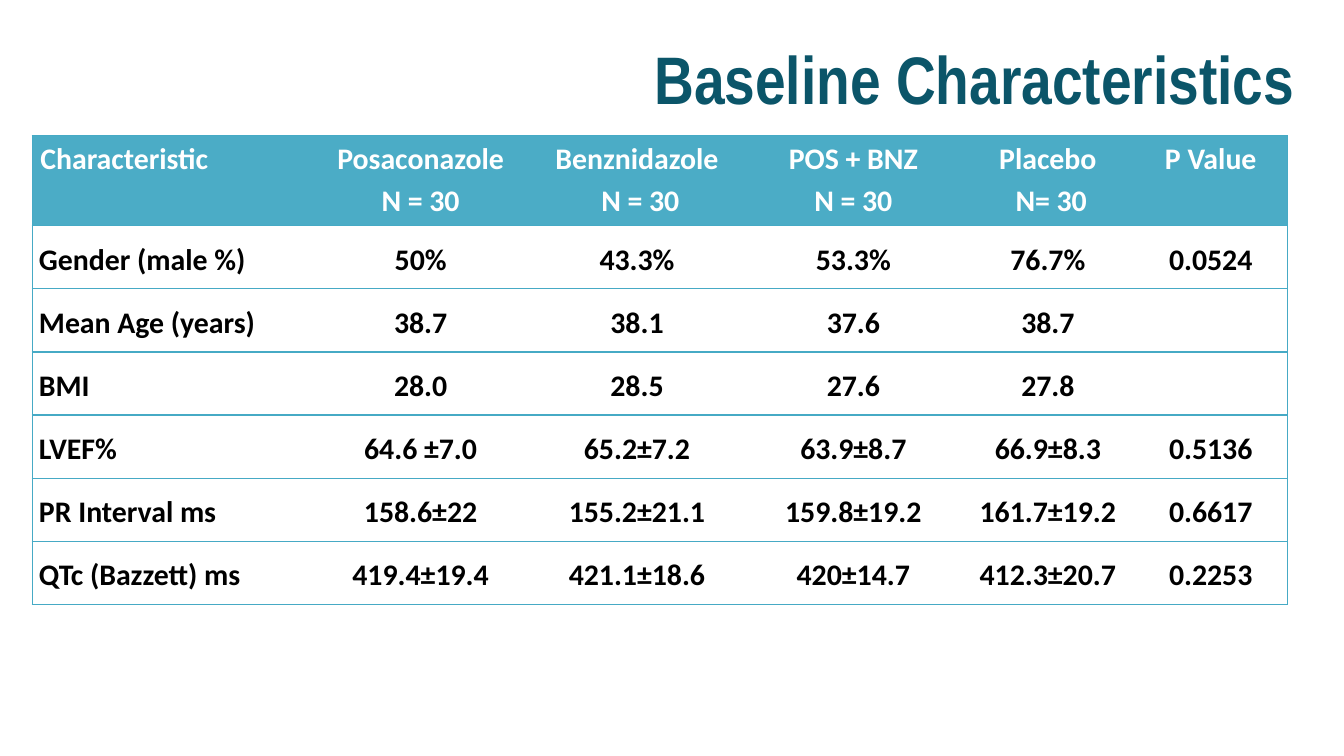
import pptx
import pptx.dml.color
import pptx.enum.text
import pptx.oxml
import pptx.oxml.ns
import pptx.util
from dataclasses import dataclass

EMU_PER_PX = 4572
NO_TABLE_STYLE = "{2D5ABB26-0587-4C30-8999-92F81FD0307C}"
ALIGN = pptx.enum.text.PP_ALIGN
ANCHOR = pptx.enum.text.MSO_ANCHOR

COLUMN_WIDTHS = [417, 322, 322, 322, 257, 228]
HEADER_HEIGHT, BODY_HEIGHT = 134, 94
HEADER = ["Characteristic", "Posaconazole\nN = 30", "Benznidazole\n N = 30",
          "POS + BNZ\nN = 30", "Placebo\n N= 30", "P Value"]
BODY = [
    ["Gender (male %)", "50%", "43.3%", "53.3%", "76.7%", "0.0524"],
    ["Mean Age (years)", "38.7", "38.1", "37.6", "38.7", ""],
    ["BMI", "28.0", "28.5", "27.6", "27.8", ""],
    ["LVEF%", "64.6 ±7.0", "65.2±7.2", "63.9±8.7", "66.9±8.3", "0.5136"],
    ["PR Interval ms", "158.6±22", "155.2±21.1", "159.8±19.2", "161.7±19.2", "0.6617"],
    ["QTc (Bazzett) ms", "419.4±19.4", "421.1±18.6", "420±14.7", "412.3±20.7", "0.2253"],
]


@dataclass(frozen=True)
class Theme:
    title_font: str = "Arial Narrow"
    table_font: str = "Calibri"
    title_size: int = 36
    table_size: int = 16
    title_color: str = "0B5569"
    header_fill: str = "4BACC6"
    header_text: str = "FFFFFF"
    body_text: str = "000000"
    border: str = "46AAC5"
    border_width: float = 0.75


def px(length):
    return pptx.util.Emu(length * EMU_PER_PX)


def rgb(value):
    return pptx.dml.color.RGBColor.from_string(value)


def write_text(frame, text, *, font, size, color, align=ALIGN.LEFT, spacing=1.0):
    """Fill a text frame with bold text, one paragraph per line."""
    for index, line in enumerate(text.split("\n")):
        para = frame.paragraphs[0] if index == 0 else frame.add_paragraph()
        para.alignment = align
        para.line_spacing = spacing
        span = para.add_run()
        span.text = line
        span.font.name = font
        span.font.size = pptx.util.Pt(size)
        span.font.bold = True
        span.font.color.rgb = rgb(color)


class SlideBuilder:
    def __init__(self, page, theme):
        self.page = page
        self.theme = theme

    def title(self, text, left, top, width, height):
        box = self.page.shapes.add_textbox(px(left), px(top), px(width), px(height))
        frame = box.text_frame
        frame.word_wrap = True
        frame.vertical_anchor = ANCHOR.MIDDLE
        write_text(frame, text, font=self.theme.title_font, size=self.theme.title_size,
                   color=self.theme.title_color, align=ALIGN.RIGHT)

    def table(self, rows, left, top, widths, heights):
        holder = self.page.shapes.add_table(len(rows), len(widths), px(left), px(top),
                                            px(sum(widths)), px(sum(heights)))
        table = holder.table
        table.horz_banding = False
        style = table._tbl.tblPr.find(pptx.oxml.ns.qn("a:tableStyleId"))
        style.text = NO_TABLE_STYLE
        for column, width in zip(table.columns, widths):
            column.width = px(width)
        for row, height in zip(table.rows, heights):
            row.height = px(height)
        for row_index, row in enumerate(rows):
            for column_index, text in enumerate(row):
                cell = table.cell(row_index, column_index)
                sides = "TB"
                if column_index == 0:
                    sides = "LTB"
                elif column_index == len(widths) - 1:
                    sides = "RTB"
                self.borders(cell, sides)
                self.fill_cell(cell, text, header=row_index == 0, label=column_index == 0)

    def borders(self, cell, sides):
        properties = cell._tc.get_or_add_tcPr()
        width = pptx.util.Pt(self.theme.border_width)
        for side in sides:
            properties.append(pptx.oxml.parse_xml(
                f'<a:ln{side} {pptx.oxml.ns.nsdecls("a")} w="{width}"><a:solidFill>'
                f'<a:srgbClr val="{self.theme.border}"/></a:solidFill></a:ln{side}>'))

    def fill_cell(self, cell, text, *, header, label):
        theme = self.theme
        if header:
            cell.fill.solid()
            cell.fill.fore_color.rgb = rgb(theme.header_fill)
        else:
            cell.fill.background()
        cell.margin_left = cell.margin_right = px(12 if header else 10)
        cell.margin_top = cell.margin_bottom = px(0 if header else 10)
        cell.vertical_anchor = ANCHOR.TOP if header else ANCHOR.MIDDLE
        if text:
            write_text(cell.text_frame, text, font=theme.table_font, size=theme.table_size,
                       color=theme.header_text if header else theme.body_text,
                       align=ALIGN.LEFT if label else ALIGN.CENTER, spacing=1.15)


def main():
    deck = pptx.Presentation()
    deck.slide_width, deck.slide_height = px(2000), px(1125)
    page = deck.slides.add_slide(deck.slide_layouts[6])
    builder = SlideBuilder(page, Theme())
    builder.title("Baseline Characteristics", 100, 30, 1846, 172)
    builder.table([HEADER] + BODY, 48, 202, COLUMN_WIDTHS,
                  [HEADER_HEIGHT] + [BODY_HEIGHT] * len(BODY))
    deck.save("out.pptx")


if __name__ == "__main__":
    main()
